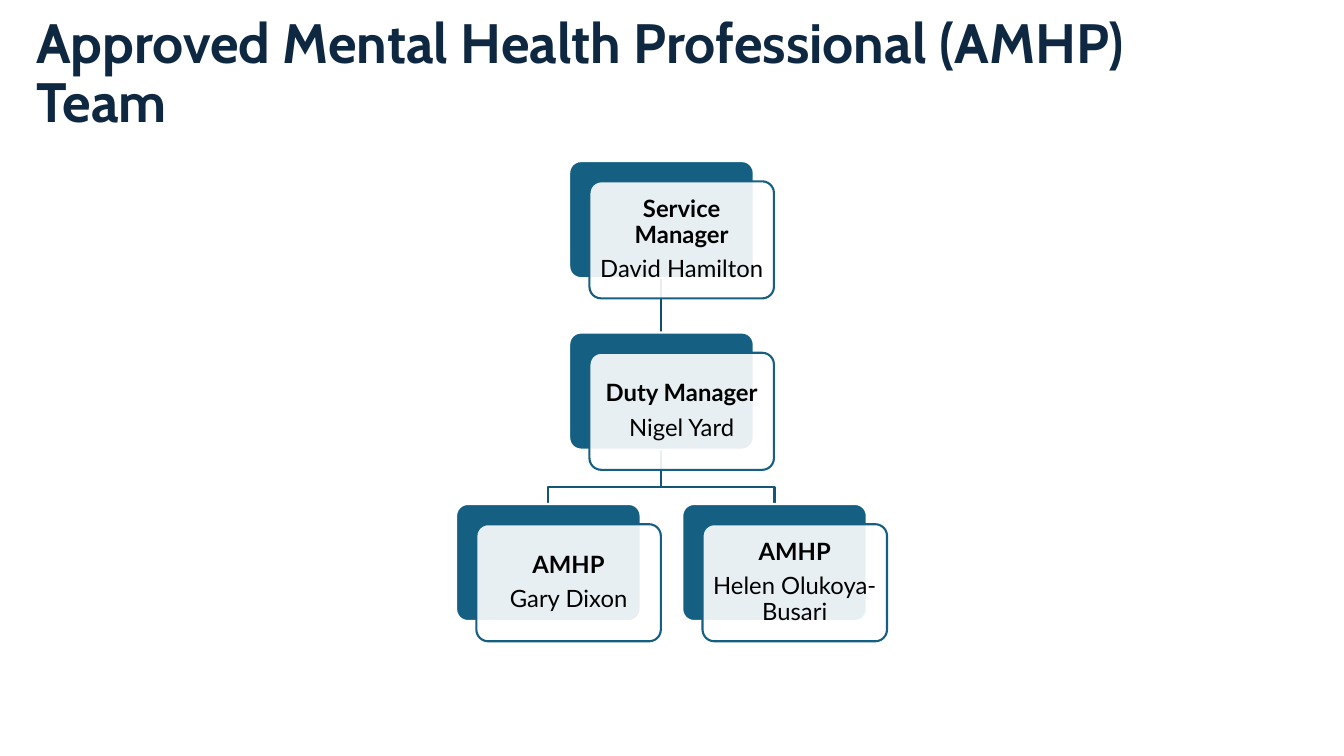
from dataclasses import dataclass
from lxml.etree import SubElement
from pptx import Presentation
from pptx.dml.color import RGBColor as Rgb
from pptx.enum.shapes import MSO_SHAPE as Kind
from pptx.enum.text import MSO_ANCHOR as Anchor, PP_ALIGN as Align
from pptx.oxml.ns import qn
from pptx.util import Cm, Pt


@dataclass(frozen=True)
class Theme:
    navy: Rgb = Rgb.from_string("0E2841")
    teal: Rgb = Rgb.from_string("156082")
    upper: Rgb = Rgb.from_string("114D68")
    lower: Rgb = Rgb.from_string("135776")
    white: Rgb = Rgb.from_string("FFFFFF")
    black: Rgb = Rgb.from_string("000000")
    head: str = "Cabin"
    body: str = "Lato"
    big: Pt = Pt(39.6)
    small: Pt = Pt(17)
    gap: Pt = Pt(6)
    rule: Pt = Pt(1.5)


THEME = Theme()
WIDE, HIGH = 4.65, 2.95
SHIFT = 0.51
STEP = 4.32
SPREAD = 2.85
STAFF = [
    (0, 0, "Service Manager", "David Hamilton"),
    (0, 1, "Duty Manager", "Nigel Yard"),
    (-1, 2, "AMHP", "Gary Dixon"),
    (1, 2, "AMHP", "Helen Olukoya- Busari"),
]
LINKS = [(1, 1, 2, THEME.lower), (1, -1, 2, THEME.lower), (0, 0, 1, THEME.upper)]


def style(para, face, size, color, bold):
    para.line_spacing = 0.9
    font = para.font
    font.name, font.size, font.bold = face, size, bold
    font.color.rgb = color


def title(slide, text, left, top, width, height):
    box = slide.shapes.add_textbox(Cm(left), Cm(top), Cm(width), Cm(height))
    frame = box.text_frame
    frame.word_wrap = True
    frame.vertical_anchor = Anchor.MIDDLE
    frame.text = text
    style(frame.paragraphs[0], THEME.head, THEME.big, THEME.navy, True)


def wire(slide, points, color):
    first, *rest = [(Cm(x), Cm(y)) for x, y in points]
    build = slide.shapes.build_freeform(*first)
    build.add_line_segments(rest, close=False)
    line = build.convert_to_shape()
    line.shadow.inherit = False
    line.fill.background()
    line.line.color.rgb = color
    line.line.width = THEME.rule


def panel(slide, left, top, fill, edge):
    shape = slide.shapes.add_shape(
        Kind.ROUNDED_RECTANGLE, Cm(left), Cm(top), Cm(WIDE), Cm(HIGH))
    shape.adjustments[0] = 0.1
    shape.shadow.inherit = False
    shape.fill.solid()
    shape.fill.fore_color.rgb = fill
    shape.line.color.rgb = edge
    shape.line.width = THEME.rule
    return shape


def card(slide, left, top, role, name):
    panel(slide, left, top, THEME.teal, THEME.white)
    front = panel(slide, left + SHIFT, top + SHIFT, THEME.white, THEME.teal)
    tint = front.fill._xPr.find(qn("a:solidFill"))[0]
    SubElement(tint, qn("a:alpha"), val="90000")
    frame = front.text_frame
    frame.word_wrap = True
    frame.vertical_anchor = Anchor.MIDDLE
    frame.margin_left = frame.margin_right = Cm(0.18)
    frame.margin_top = frame.margin_bottom = Cm(0.18)
    frame.text = f"{role}\n{name}"
    for para, bold in zip(frame.paragraphs, (True, False)):
        style(para, THEME.body, THEME.small, THEME.black, bold)
        para.alignment = Align.CENTER
        para.space_after = THEME.gap


def chart(slide, mid, top):
    for row, side, goal, color in LINKS:
        start, end = top + row * STEP + HIGH, top + goal * STEP
        points = [(mid, start), (mid, end)]
        if side:
            turn, far = end - 0.43, mid + side * SPREAD
            points = [(mid, start), (mid, turn), (far, turn), (far, end)]
        wire(slide, points, color)
    for side, row, role, name in STAFF:
        left = mid + side * SPREAD - WIDE / 2
        card(slide, left, top + row * STEP, role, name)


def main():
    deck = Presentation()
    deck.slide_width, deck.slide_height = Cm(33.87), Cm(19.05)
    slide = deck.slides.add_slide(deck.slide_layouts[6])
    title(slide, "Approved Mental Health Professional (AMHP) Team",
          0.66, 0.91, 29.21, 1.96)
    chart(slide, 16.67, 4.06)
    deck.save("out.pptx")


if __name__ == "__main__":
    main()
